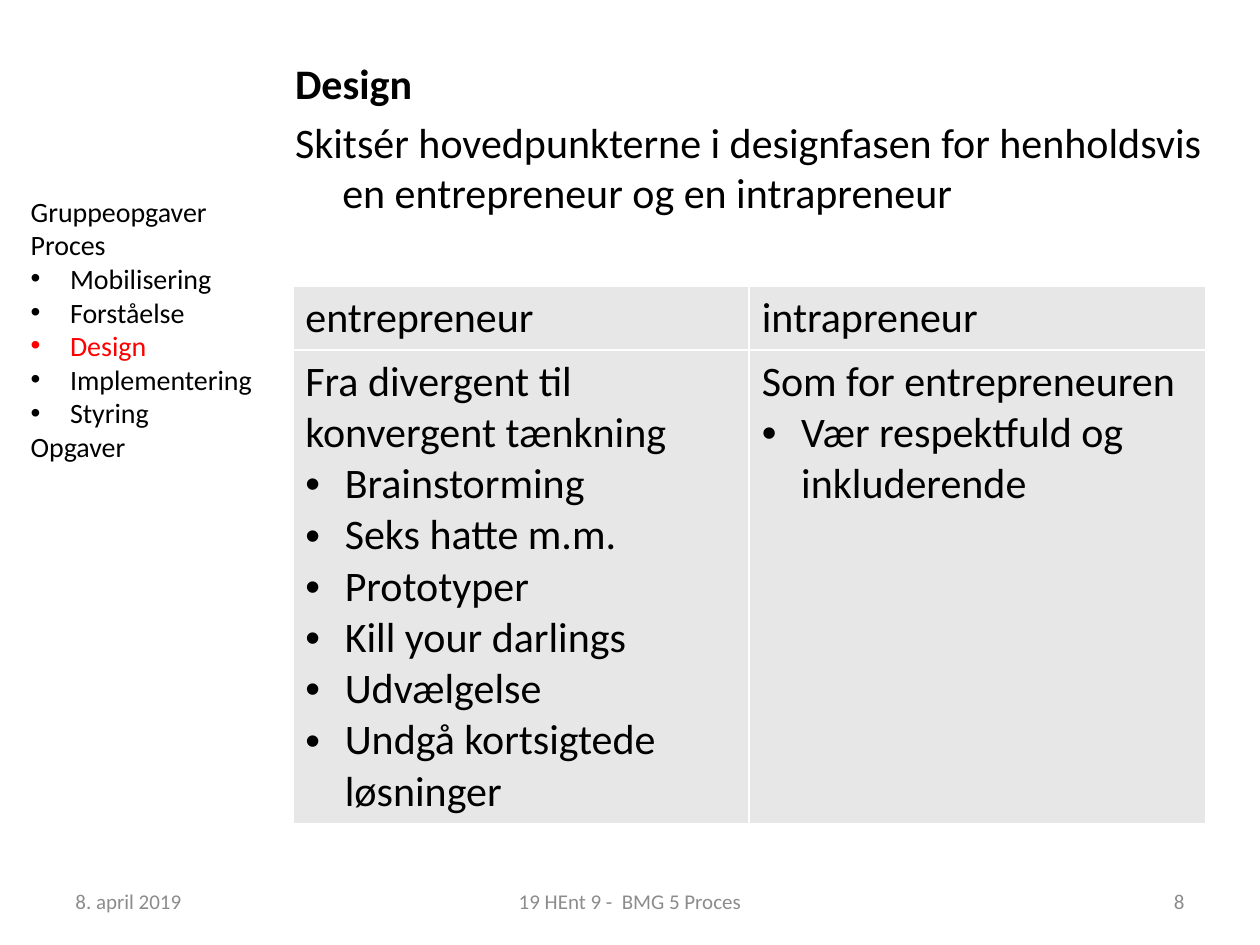
"""Build the slide on the design phase for entrepreneurs and intrapreneurs."""
from lxml import etree
from pptx import Presentation
from pptx.dml.color import RGBColor
from pptx.enum.text import MSO_ANCHOR, PP_ALIGN
from pptx.oxml.ns import qn
from pptx.util import Pt

TOP, MIDDLE = MSO_ANCHOR.TOP, MSO_ANCHOR.MIDDLE
LEFT, CENTER, RIGHT = PP_ALIGN.LEFT, PP_ALIGN.CENTER, PP_ALIGN.RIGHT
BLACK, RED, GRAY, PALE, WHITE = "000000", "FF0000", "8C8C8C", "E7E7E7", "FFFFFF"


def color(code):
    """Turn a hex string into a colour."""
    return RGBColor.from_string(code)


def write(frame, lines, size, ink=BLACK, align=LEFT):
    """Fill a text frame; a line that starts with a bullet becomes a list item."""
    frame.word_wrap = True
    for i, line in enumerate(lines):
        para = frame.paragraphs[0] if i == 0 else frame.add_paragraph()
        para.text = line.removeprefix("•")
        para.alignment = align
        if line.startswith("•"):
            props = para._p.get_or_add_pPr()
            props.set("marL", str(Pt(22.5)))
            props.set("indent", str(Pt(-22.5)))
            etree.SubElement(props, qn("a:buFont")).set("typeface", "Arial")
            etree.SubElement(props, qn("a:buChar")).set("char", "•")
        font = para.font
        font.name, font.size = "Calibri", Pt(size)
        font.color.rgb = color(ink)


deck = Presentation()
deck.slide_width, deck.slide_height = Pt(720), Pt(540)
slide = deck.slides.add_slide(deck.slide_layouts[6])
shapes = slide.shapes

body = shapes.add_textbox(Pt(161.5), Pt(29.5), Pt(538.5), Pt(463)).text_frame
write(body, [
    "Design",
    "Skitsér hovedpunkterne i designfasen for henholdsvis en entrepreneur og en intrapreneur",
], 24)
body.paragraphs[0].font.bold = True
for para in body.paragraphs:
    para.space_before = Pt(4.8)
    props = para._p.get_or_add_pPr()
    props.set("marL", str(Pt(27)))
    props.set("indent", str(Pt(-27)))

rows = [
    (["entrepreneur"], ["intrapreneur"]),
    (["Fra divergent til konvergent tænkning", "•Brainstorming", "•Seks hatte m.m.",
      "•Prototyper", "•Kill your darlings", "•Udvælgelse", "•Undgå kortsigtede løsninger"],
     ["Som for entrepreneuren", "•Vær respektfuld og inkluderende"]),
]
table = shapes.add_table(2, 2, Pt(167.3), Pt(163.8), Pt(521.6), Pt(307)).table
for row, high in zip(table.rows, (36.2, 270.8)):
    row.height = Pt(high)
for r, row in enumerate(rows):
    for c, lines in enumerate(row):
        cell = table.cell(r, c)
        write(cell.text_frame, lines, 24)
        props = cell._tc.get_or_add_tcPr()
        for side in ("a:lnL", "a:lnR", "a:lnT", "a:lnB"):
            edge = etree.SubElement(props, qn(side), w=str(Pt(1)))
            fill = etree.SubElement(edge, qn("a:solidFill"))
            etree.SubElement(fill, qn("a:srgbClr"), val=WHITE)
        cell.fill.solid()
        cell.fill.fore_color.rgb = color(PALE)

menu = shapes.add_textbox(Pt(10.5), Pt(107.5), Pt(157.5), Pt(184)).text_frame
write(menu, ["Gruppeopgaver", "Proces", "•Mobilisering", "•Forståelse", "•Design",
             "•Implementering", "•Styring", "Opgaver"], 16)
menu.paragraphs[4].font.color.rgb = color(RED)

for text, left, width, align in (
    ("8. april 2019", 36, 168, LEFT),
    ("19 HEnt 9 -  BMG 5 Proces", 246, 228, CENTER),
    ("8", 516, 168, RIGHT),
):
    foot = shapes.add_textbox(Pt(left), Pt(500.5), Pt(width), Pt(28.75)).text_frame
    foot.vertical_anchor = MIDDLE
    write(foot, [text], 12, GRAY, align)

deck.save("out.pptx")
